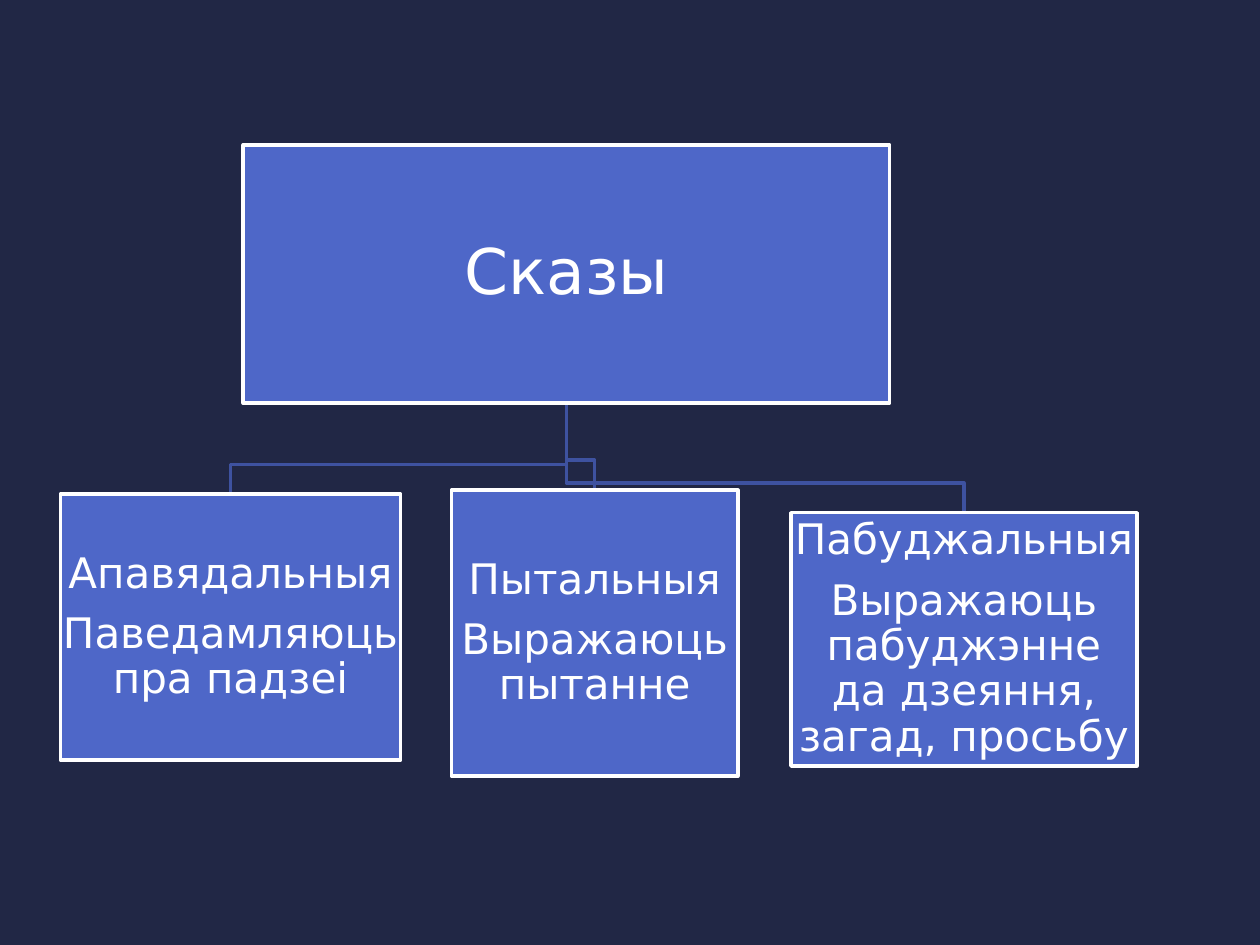
from pptx import Presentation
from pptx.dml.color import RGBColor
from pptx.enum import shapes, text
from pptx.util import Pt

COLOURS = {"background": "212745", "box": "4E67C8", "branch": "3E52A0", "white": "FFFFFF"}
FONT = "DejaVu Sans"
ELBOW_RISE = 17

ROOT = ((139, 82.8, 369.4, 147.6), ["Сказы"])
KINDS = [
    ((34.5, 282.4, 194.5, 152), ["Апавядальныя", "Паведамляюць пра падзеі"]),
    ((258, 280, 163.6, 163.6), ["Пытальныя", "Выражаюць пытанне"]),
    ((452, 293, 197.6, 144.8),
     ["Пабуджальныя", "Выражаюць пабуджэнне да дзеяння, загад, просьбу"]),
]


def colour(name):
    return RGBColor.from_string(COLOURS[name])


def set_line(shape, name):
    shape.line.color.rgb = colour(name)
    shape.line.width = Pt(2)
    shape.shadow.inherit = False


def add_branch(page, parent, child):
    left, top, width, height = parent
    start_x, start_y = left + width / 2, top + height
    end_x, end_y = child[0] + child[2] / 2, child[1]
    bend_y = end_y - ELBOW_RISE
    corners = [(start_x, bend_y), (end_x, bend_y), (end_x, end_y)]
    builder = page.shapes.build_freeform(Pt(start_x), Pt(start_y))
    builder.add_line_segments([(Pt(x), Pt(y)) for x, y in corners], close=False)
    branch = builder.convert_to_shape()
    branch.fill.background()
    set_line(branch, "branch")


def add_box(page, frame, lines, size, inset):
    box = page.shapes.add_shape(shapes.MSO_SHAPE.RECTANGLE, *map(Pt, frame))
    box.fill.solid()
    box.fill.fore_color.rgb = colour("box")
    set_line(box, "white")
    body = box.text_frame
    body.word_wrap = True
    body.vertical_anchor = text.MSO_ANCHOR.MIDDLE
    body.margin_left = body.margin_right = Pt(inset)
    body.margin_top = body.margin_bottom = Pt(inset)
    body.text = "\n".join(lines)
    for para in body.paragraphs:
        para.alignment = text.PP_ALIGN.CENTER
        para.line_spacing = 0.9
        para.space_after = Pt(size * 0.35)
        for span in para.runs:
            span.font.name = FONT
            span.font.size = Pt(size)
            span.font.color.rgb = colour("white")


def main():
    deck = Presentation()
    deck.slide_width, deck.slide_height = Pt(720), Pt(540)
    page = deck.slides.add_slide(deck.slide_layouts[6])
    page.background.fill.solid()
    page.background.fill.fore_color.rgb = colour("background")

    root_frame, root_lines = ROOT
    for frame, _ in reversed(KINDS):
        add_branch(page, root_frame, frame)
    add_box(page, root_frame, root_lines, size=36, inset=2)
    for frame, lines in KINDS:
        add_box(page, frame, lines, size=24, inset=1.2)

    deck.save("out.pptx")


if __name__ == "__main__":
    main()
